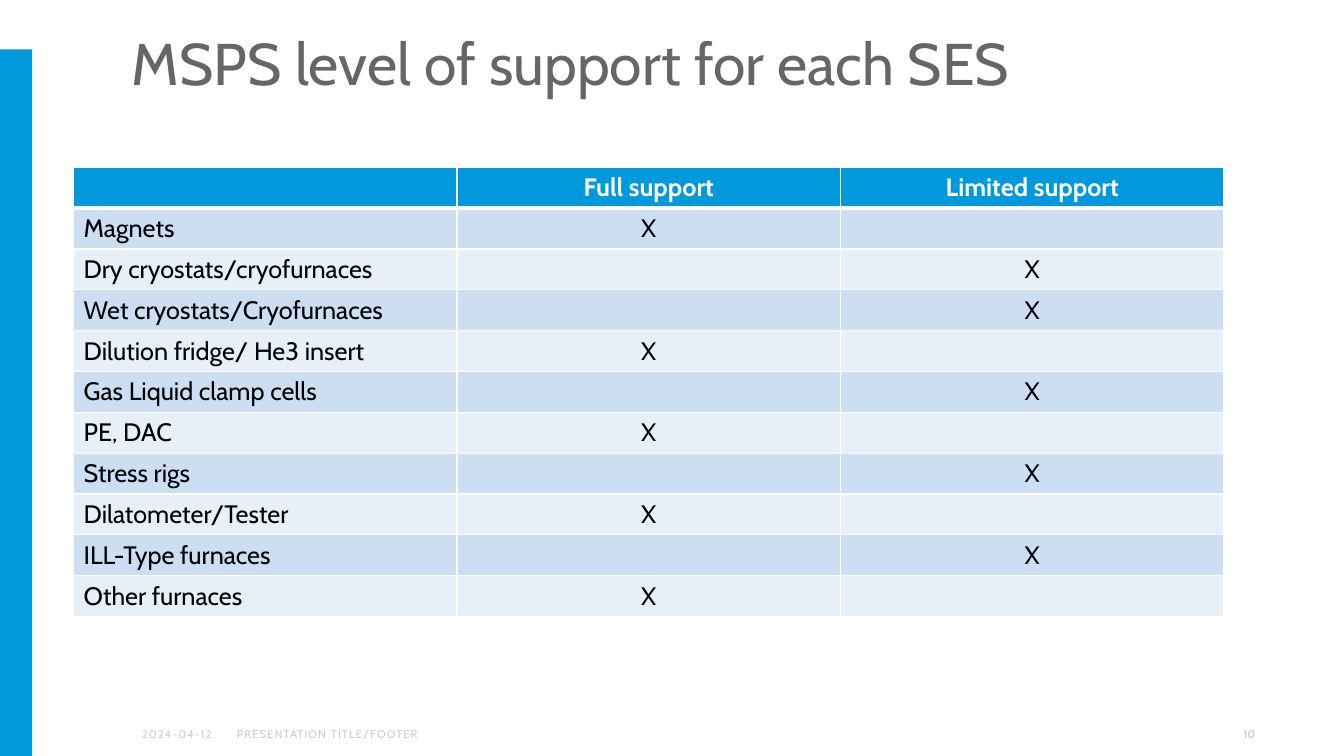
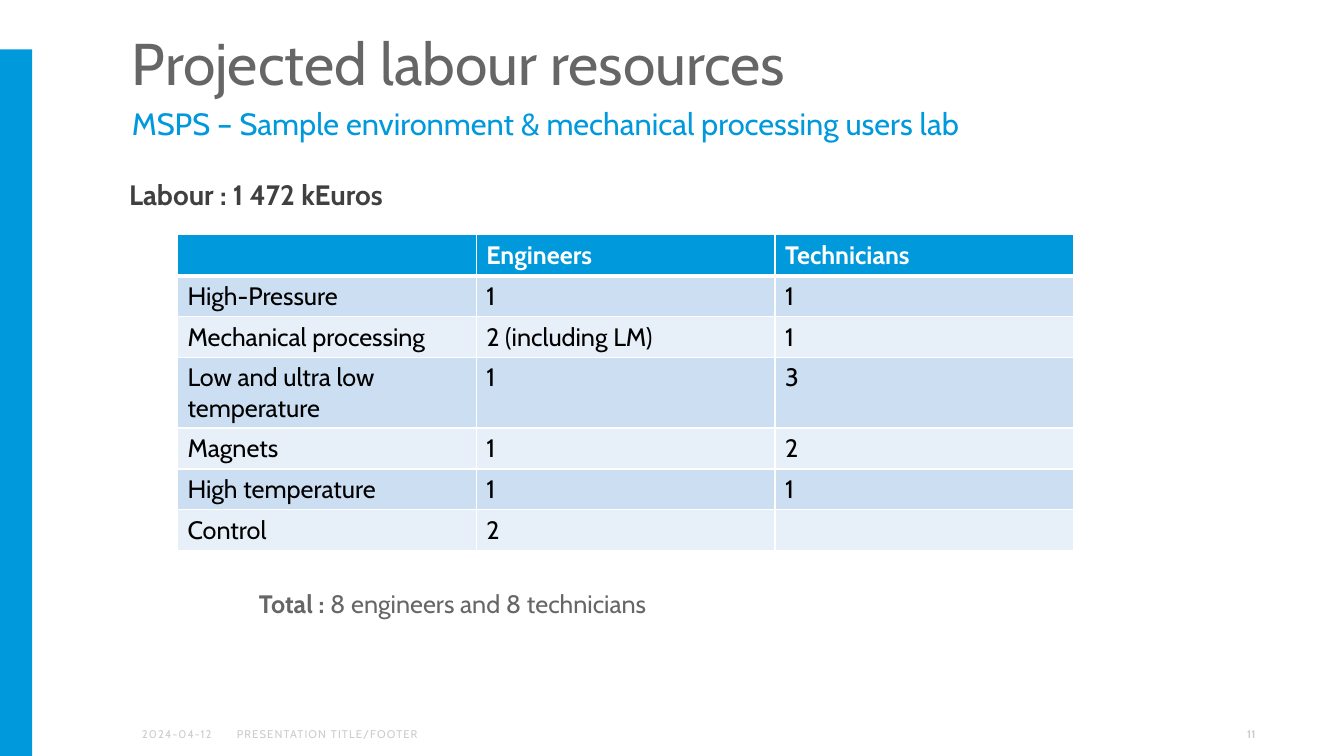
from lxml import etree
from pptx import Presentation
from pptx import util as u
from pptx.dml.color import RGBColor
from pptx.enum import shapes, text
from pptx.oxml import ns

FONT = "Cabin"
BLUE, GREY, DARK, PALE = "0099DC", "666666", "404040", "CCCCCC"
WHITE, BLACK = "FFFFFF", "000000"
BANDS = ("CCDEF2", "E7EFF9")
LEFT, CENTRE, RIGHT = text.PP_ALIGN.LEFT, text.PP_ALIGN.CENTER, text.PP_ALIGN.RIGHT
TOP, MIDDLE = text.MSO_ANCHOR.TOP, text.MSO_ANCHOR.MIDDLE

SUPPORT = [
    ("", "Full support", "Limited support"),
    ("Magnets", "X", ""),
    ("Dry cryostats/cryofurnaces", "", "X"),
    ("Wet cryostats/Cryofurnaces", "", "X"),
    ("Dilution fridge/ He3 insert", "X", ""),
    ("Gas Liquid clamp cells", "", "X"),
    ("PE, DAC", "X", ""),
    ("Stress rigs", "", "X"),
    ("Dilatometer/Tester", "X", ""),
    ("ILL-Type furnaces", "", "X"),
    ("Other furnaces", "X", ""),
]
LABOUR = [
    ("", "Engineers", "Technicians"),
    ("High-Pressure", "1", "1"),
    ("Mechanical processing", "2 (including LM)", "1"),
    ("Low and ultra low temperature", "1", "3"),
    ("Magnets", "1", "2"),
    ("High temperature", "1", "1"),
    ("Control", "2", ""),
]


def colour(value):
    return RGBColor.from_string(value)


def inches(box):
    return [u.Inches(length) for length in box]


def write(para, words, size=18, ink=BLACK, bold=False, align=LEFT, tracking=0):
    para.alignment = align
    span = para.add_run()
    span.text = words
    span.font.name = FONT
    span.font.size = u.Pt(size)
    span.font.bold = bold
    span.font.color.rgb = colour(ink)
    if tracking:
        span._r.get_or_add_rPr().set("spc", str(round(tracking * 100)))


def add_text(page, box, words, insets=(0.1, 0.05, 0.1, 0.05), anchor=TOP,
             wrap=True, line_spacing=None, **style):
    frame = page.shapes.add_textbox(*inches(box)).text_frame
    frame.word_wrap = wrap
    frame.vertical_anchor = anchor
    (frame.margin_left, frame.margin_top,
     frame.margin_right, frame.margin_bottom) = inches(insets)
    para = frame.paragraphs[0]
    if line_spacing:
        para.line_spacing = line_spacing
    write(para, words, **style)
    return para


def add_borders(cell, top=1, bottom=1):
    properties = cell._tc.get_or_add_tcPr()
    sides = (("a:lnL", 1), ("a:lnR", 1), ("a:lnT", top), ("a:lnB", bottom))
    for place, (side, width) in enumerate(sides):
        line = etree.Element(ns.qn(side), w=str(u.Pt(width)))
        fill = etree.SubElement(line, ns.qn("a:solidFill"))
        etree.SubElement(fill, ns.qn("a:srgbClr"), val=WHITE)
        properties.insert(place, line)


def add_grid(page, box, rows, align=LEFT):
    left, top, width, height = inches(box)
    table = page.shapes.add_table(
        len(rows), len(rows[0]), left, top, width, height).table
    table.first_row = table.horz_banding = False
    for column in table.columns:
        column.width = width // len(rows[0])
    for i, row in enumerate(rows):
        header = i == 0
        table.rows[i].height = height // len(rows)
        for j, words in enumerate(row):
            cell = table.cell(i, j)
            cell.fill.solid()
            cell.fill.fore_color.rgb = colour(BLUE if header else BANDS[(i - 1) % 2])
            add_borders(cell, top=3 if i == 1 else 1, bottom=3 if header else 1)
            if words:
                write(cell.text_frame.paragraphs[0], words, bold=header,
                      ink=WHITE if header else BLACK, align=align if j else LEFT)


def add_footer(page, number, left=1.31, top=7.08, height=0.4):
    style = dict(anchor=MIDDLE, size=8, ink=PALE)
    add_text(page, (left, top, 0.91, height), "2024-04-12", tracking=0.8, **style)
    add_text(page, (left + 0.94, top, 4.72, height), "PRESENTATION TITLE/FOOTER",
             tracking=0.8, **style)
    add_text(page, (left + 8.24, top, 3, height), str(number),
             bold=True, align=RIGHT, **style)


def add_page(deck, title, number):
    page = deck.slides.add_slide(deck.slide_layouts[6])
    band = page.shapes.add_shape(
        shapes.MSO_SHAPE.RECTANGLE, *inches((0, 0.49, 0.32, 7.01)))
    band.shadow.inherit = False
    band.fill.solid()
    band.fill.fore_color.rgb = colour(BLUE)
    band.line.fill.background()
    add_text(page, (1.21, 0.29, 10.24, 0.72), title, insets=(0.1, 0.05, 0.1, 0.02),
             line_spacing=0.9, size=42, ink=GREY)
    add_footer(page, number)
    return page


def add_support_page(deck):
    page = add_page(deck, "MSPS level of support for each SES", 10)
    add_grid(page, (0.73, 1.66, 11.41, 4.46), SUPPORT, align=CENTRE)


def add_labour_page(deck):
    page = add_page(deck, "Projected labour resources", 11)
    add_text(page, (1.21, 1.02, 10.24, 0.55),
             "MSPS – Sample environment & mechanical processing users lab",
             insets=(0.1, 0.02, 0.1, 0.05), size=22, ink=BLUE)
    add_text(page, (1.2, 1.71, 11.36, 0.45), "Labour : 1 472 kEuros",
             insets=(0.08, 0.05, 0.02, 0.05), size=20, ink=DARK, bold=True)
    add_grid(page, (1.76, 2.33, 8.89, 2.84), LABOUR)
    total = add_text(page, (2.47, 5.79, 4.28, 0.4), "Total : ",
                     wrap=False, ink=GREY, bold=True)
    write(total, "8 engineers and 8 technicians", ink=GREY)


def main():
    deck = Presentation()
    deck.slide_width, deck.slide_height = inches((13.33, 7.5))
    add_support_page(deck)
    add_labour_page(deck)
    deck.save("out.pptx")


if __name__ == "__main__":
    main()
